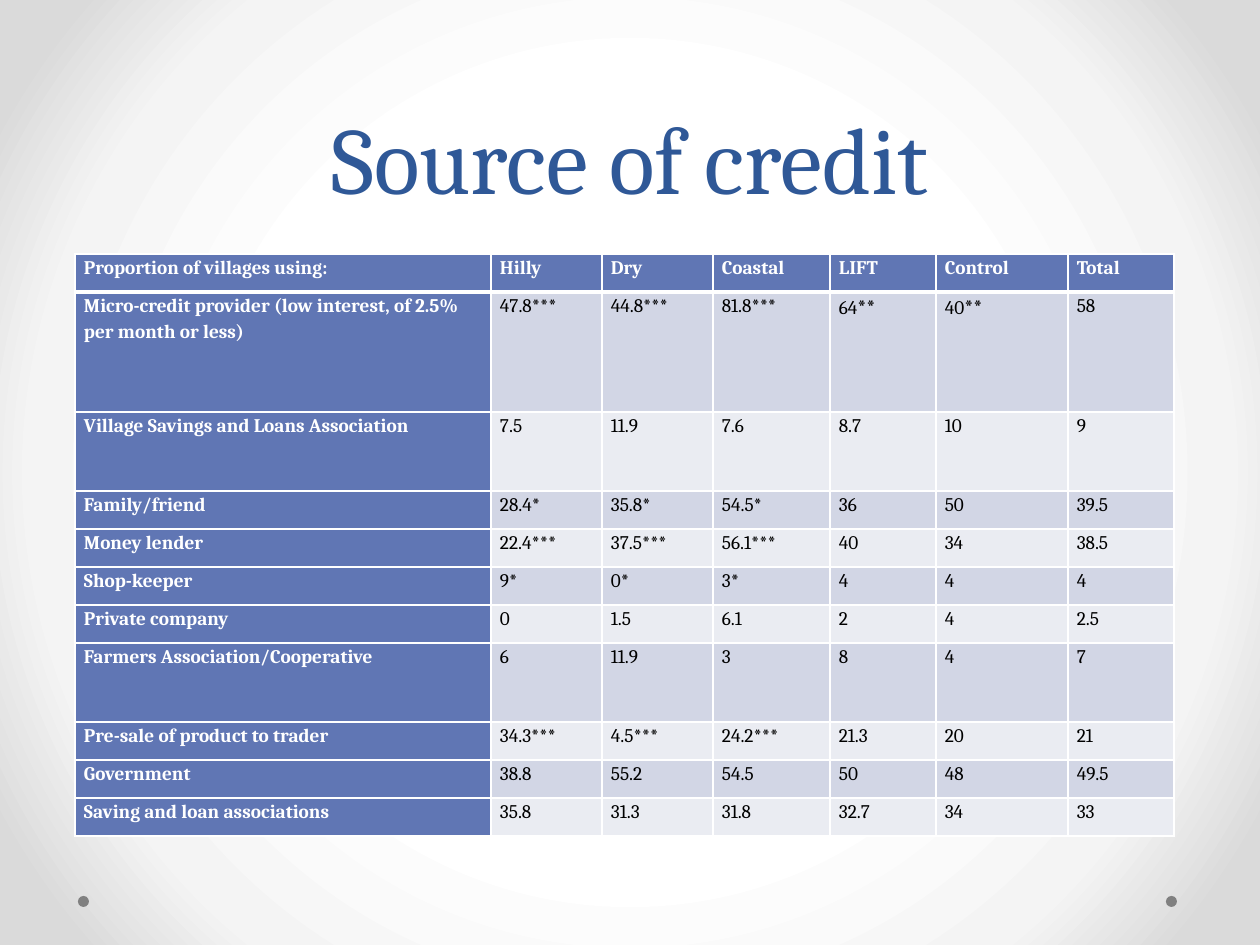
from dataclasses import dataclass
from typing import Any

from lxml.etree import SubElement
from pptx import Presentation
from pptx.dml.color import RGBColor
from pptx.enum.shapes import MSO_SHAPE as Preset
from pptx.enum.text import MSO_ANCHOR as Anchor, PP_ALIGN as Align
from pptx.oxml import parse_xml
from pptx.oxml.ns import nsdecls, qn
from pptx.util import Emu, Pt

EMU_PER_PX = 914400 / 126
FONT = "Cambria"
COLORS = {
    "title": "2F5897",
    "header": "6076B4",
    "odd": "D2D6E5",
    "even": "EAECF2",
    "white": "FFFFFF",
    "black": "000000",
    "dot": "808080",
    "mist": "F4F4F4",
    "edge": "DADADA",
}
GRADIENT = {50: "white", 76: "mist", 92: "edge"}


@dataclass(frozen=True)
class Box:
    left: int
    top: int
    width: int
    height: int

    def emu(self) -> tuple[Emu, ...]:
        return tuple(map(px, (self.left, self.top, self.width, self.height)))


@dataclass(frozen=True)
class Source:
    label: str
    values: tuple[str, ...]
    height: int = 38


TITLE_BOX = Box(63, 0, 1134, 220)
TABLE_BOX = Box(75, 254, 1099, 582)
DOTS = (Box(1166, 896, 11, 11), Box(78, 896, 11, 11))
COLUMN_WIDTHS = (416, 111, 111, 117, 106, 132, 106)
SOURCES = (
    Source("Proportion of villages using:", ("Hilly", "Dry", "Coastal", "LIFT", "Control", "Total")),
    Source(
        "Micro-credit provider (low interest, of 2.5% per month or less)",
        ("47.8***", "44.8***", "81.8***", "64**", "40**", "58"),
        120,
    ),
    Source("Village Savings and Loans Association", ("7.5", "11.9", "7.6", "8.7", "10", "9"), 79),
    Source("Family/friend", ("28.4*", "35.8*", "54.5*", "36", "50", "39.5")),
    Source("Money lender", ("22.4***", "37.5***", "56.1***", "40", "34", "38.5")),
    Source("Shop-keeper", ("9*", "0*", "3*", "4", "4", "4")),
    Source("Private company", ("0", "1.5", "6.1", "2", "4", "2.5")),
    Source("Farmers Association/Cooperative", ("6", "11.9", "3", "8", "4", "7"), 79),
    Source("Pre-sale of product to trader", ("34.3***", "4.5***", "24.2***", "21.3", "20", "21")),
    Source("Government", ("38.8", "55.2", "54.5", "50", "48", "49.5")),
    Source("Saving and loan associations", ("35.8", "31.3", "31.8", "32.7", "34", "33")),
)


def px(length: int) -> Emu:
    return Emu(round(length * EMU_PER_PX))


def rgb(name: str) -> RGBColor:
    return RGBColor.from_string(COLORS[name])


def write_text(
    frame: Any, text: str, *, size: int, color: str, bold: bool = False,
    align: Align = Align.LEFT, spacing: Any = 1.15, marks: str = "", marks_size: int = 12,
) -> None:
    frame.word_wrap = True
    paragraph = frame.paragraphs[0]
    paragraph.alignment = align
    paragraph.line_spacing = spacing
    for part, part_size in ((text, size), (marks, marks_size)):
        if part:
            run = paragraph.add_run()
            run.text = part
            run.font.name = FONT
            run.font.size = Pt(part_size)
            run.font.bold = bold
            run.font.color.rgb = rgb(color)


def set_background(slide: Any) -> None:
    stops = "".join(
        f'<a:gs pos="{position * 1000}"><a:srgbClr val="{COLORS[name]}"/></a:gs>'
        for position, name in GRADIENT.items()
    )
    background = parse_xml(
        f'<p:bg {nsdecls("p", "a")}><p:bgPr><a:gradFill rotWithShape="1"><a:gsLst>{stops}</a:gsLst>'
        '<a:path path="circle"><a:fillToRect l="50000" t="50000" r="50000" b="50000"/></a:path>'
        "</a:gradFill><a:effectLst/></p:bgPr></p:bg>"
    )
    slide.element.cSld.insert(0, background)


def draw_dot(slide: Any, box: Box) -> None:
    shape = slide.shapes.add_shape(Preset.OVAL, *box.emu())
    shape.shadow.inherit = False
    shape.fill.solid()
    shape.fill.fore_color.rgb = rgb("dot")
    shape.line.fill.background()


def draw_title(slide: Any, text: str) -> None:
    frame = slide.shapes.add_textbox(*TITLE_BOX.emu()).text_frame
    frame.vertical_anchor = Anchor.BOTTOM
    write_text(frame, text, size=54, color="title", align=Align.CENTER, spacing=Pt(58))


def set_borders(cell: Any, row: int) -> None:
    properties = cell._tc.get_or_add_tcPr()
    for side in "LRTB":
        heavy = (row, side) in ((0, "B"), (1, "T"))
        line = SubElement(properties, qn(f"a:ln{side}"), w=str(Pt(3 if heavy else 1)))
        fill = SubElement(line, qn("a:solidFill"))
        SubElement(fill, qn("a:srgbClr"), val=COLORS["white"])


def draw_cell(cell: Any, text: str, row: int, column: int) -> None:
    heading = row == 0 or column == 0
    cell.margin_left = cell.margin_right = px(9)
    cell.margin_top = cell.margin_bottom = 0
    set_borders(cell, row)
    cell.fill.solid()
    cell.fill.fore_color.rgb = rgb("header" if heading else "odd" if row % 2 else "even")
    number = text.rstrip("*")
    marks = "**" if text == number + "**" else ""
    write_text(
        cell.text_frame, text.removesuffix(marks), size=11, bold=heading,
        color="white" if heading else "black", marks=marks,
    )


def draw_table(slide: Any) -> None:
    table = slide.shapes.add_table(len(SOURCES), len(COLUMN_WIDTHS), *TABLE_BOX.emu()).table
    table.horz_banding = False
    for column, width in zip(table.columns, COLUMN_WIDTHS):
        column.width = px(width)
    for row, source in enumerate(SOURCES):
        table.rows[row].height = px(source.height)
        for column, text in enumerate((source.label, *source.values)):
            draw_cell(table.cell(row, column), text, row, column)


def main() -> None:
    """Build the slide on where villages get credit."""
    presentation = Presentation()
    presentation.slide_width, presentation.slide_height = px(1260), px(945)
    slide = presentation.slides.add_slide(presentation.slide_layouts[6])
    set_background(slide)
    for box in DOTS:
        draw_dot(slide, box)
    draw_title(slide, "Source of credit")
    draw_table(slide)
    presentation.save("out.pptx")


if __name__ == "__main__":
    main()
